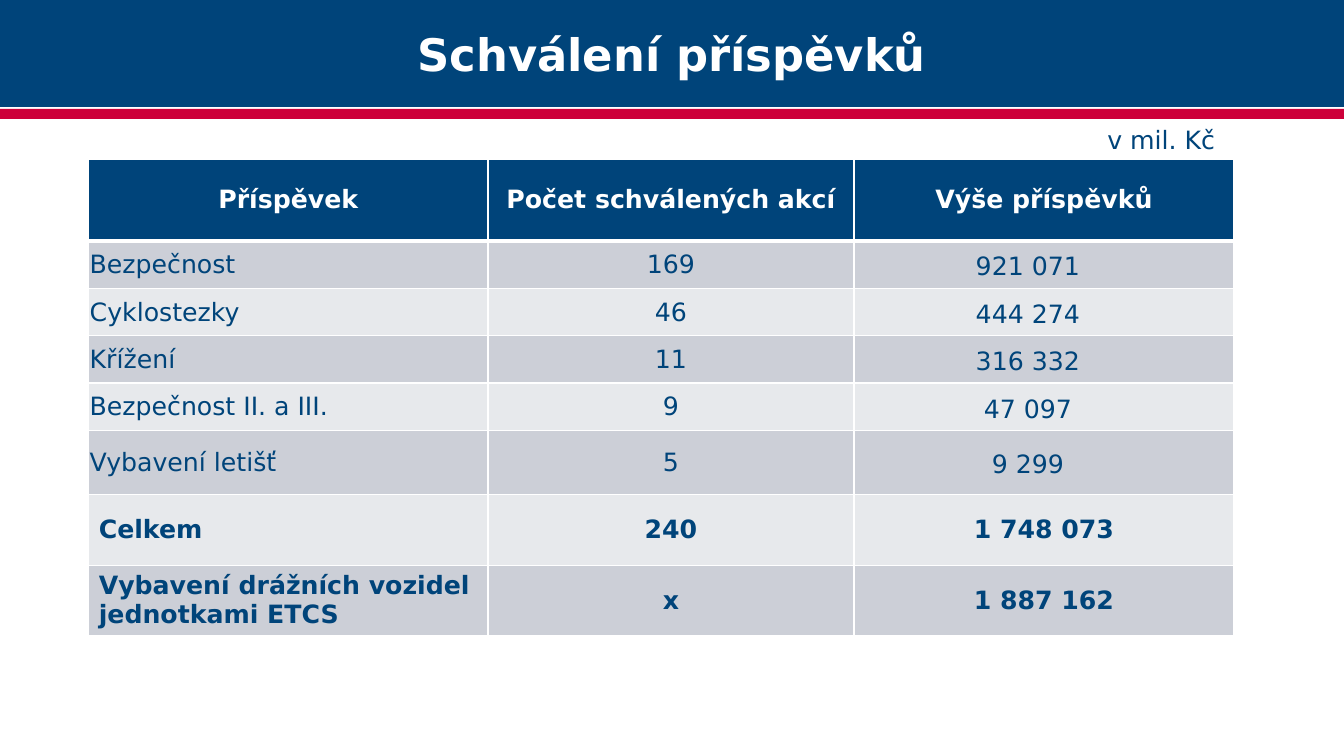
from pptx import Presentation
from pptx.dml.color import RGBColor
from pptx.enum.shapes import MSO_SHAPE as Shape
from pptx.enum.text import MSO_ANCHOR as Anchor, MSO_AUTO_SIZE as AutoSize, PP_ALIGN as Align
from pptx.oxml import parse_xml
from pptx.oxml.ns import nsdecls
from pptx.util import Inches, Pt

COLORS = {"navy": "00447A", "red": "CD003A", "white": "FFFFFF", "dark": "CCCFD7", "light": "E7E9EC"}
FONT = "DejaVu Sans"
COLUMN_WIDTHS = [3.96, 3.63, 3.77]
ROW_HEIGHTS = [0.81, 0.47, 0.47, 0.47, 0.47, 0.64, 0.7, 0.7]
ROWS = [
    ("Příspěvek", "Počet schválených akcí", "Výše příspěvků"),
    ("Bezpečnost", "169", "921 071"),
    ("Cyklostezky", "46", "444 274"),
    ("Křížení", "11", "316 332"),
    ("Bezpečnost II. a III.", "9", "47 097"),
    ("Vybavení letišť", "5", "9 299"),
    ("Celkem", "240", "1 748 073"),
    ("Vybavení drážních vozidel jednotkami ETCS", "x", "1 887 162"),
]
FIRST_TOTAL = 6


def color(name):
    """Return the named palette colour."""
    return RGBColor.from_string(COLORS[name])


def paint(shape, name):
    """Give a shape or cell a solid fill."""
    shape.fill.solid()
    shape.fill.fore_color.rgb = color(name)


def write(frame, text, ink, size=18, bold=False, align=Align.LEFT):
    """Write one formatted run into a text frame and return its paragraph."""
    para = frame.paragraphs[0]
    para.alignment = align
    span = para.add_run()
    span.text = text
    span.font.name = FONT
    span.font.size = Pt(size)
    span.font.bold = bold
    span.font.color.rgb = color(ink)
    return para


def add_border(cell, side, points):
    """Draw one white border on a cell."""
    cell._tc.get_or_add_tcPr().append(parse_xml(
        f'<a:ln{side} {nsdecls("a")} w="{Pt(points)}"><a:solidFill>'
        f'<a:srgbClr val="{COLORS["white"]}"/></a:solidFill></a:ln{side}>'))


def add_header(page, left, top, width, height):
    """Place the title band and the red stripe under it."""
    title = page.shapes.title
    title.left, title.top, title.width, title.height = (
        Inches(left), Inches(top), Inches(width), Inches(height))
    paint(title, "navy")
    frame = title.text_frame
    frame.auto_size = AutoSize.NONE
    frame.vertical_anchor = Anchor.MIDDLE
    write(frame, "Schválení příspěvků", "white", 32, True, Align.CENTER)
    stripe = page.shapes.add_shape(
        Shape.RECTANGLE, Inches(left), Inches(top + height + 0.02), Inches(width), Inches(0.1))
    stripe.shadow.inherit = False
    paint(stripe, "red")
    stripe.line.fill.background()


def fill_cell(cell, text, row, column):
    """Fill one table cell according to its row and column."""
    header = row == 0
    detail = 0 < row < FIRST_TOTAL
    for side, points in (("L", 1), ("R", 1), ("T", 3 if row == 1 else 1), ("B", 3 if header else 1)):
        add_border(cell, side, points)
    paint(cell, "navy" if header else "dark" if row % 2 else "light")
    cell.vertical_anchor = Anchor.MIDDLE
    align = Align.LEFT if column == 0 and not header else Align.CENTER
    para = write(cell.text_frame, text, "white" if header else "navy", bold=not detail, align=align)
    if detail:
        cell.margin_left = cell.margin_top = cell.margin_right = Inches(0.01)
        cell.margin_bottom = 0
        if column == 2:
            cell.margin_right = Inches(0.33)
            para.line_spacing = 1.15


def add_contributions(page, left, top):
    """Place the table of contributions."""
    table = page.shapes.add_table(
        len(ROWS), len(COLUMN_WIDTHS), Inches(left), Inches(top),
        Inches(sum(COLUMN_WIDTHS)), Inches(sum(ROW_HEIGHTS))).table
    for column, width in zip(table.columns, COLUMN_WIDTHS):
        column.width = Inches(width)
    for row, height in zip(table.rows, ROW_HEIGHTS):
        row.height = Inches(height)
    for row, texts in enumerate(ROWS):
        for column, text in enumerate(texts):
            fill_cell(table.cell(row, column), text, row, column)


def add_unit(page, left, top, width, height):
    """Place the unit note above the table."""
    box = page.shapes.add_textbox(Inches(left), Inches(top), Inches(width), Inches(height))
    box.text_frame.word_wrap = True
    write(box.text_frame, "v mil. Kč", "navy", align=Align.RIGHT)


def main():
    """Build the slide and save the deck."""
    deck = Presentation()
    deck.slide_width, deck.slide_height = Inches(13.33), Inches(7.5)
    page = deck.slides.add_slide(deck.slide_layouts[5])
    page.background.fill.solid()
    page.background.fill.fore_color.rgb = color("white")
    add_header(page, 0, 0, 13.33, 1.06)
    add_contributions(page, 0.88, 1.58)
    add_unit(page, 10.77, 1.18, 1.38, 0.4)
    deck.save("out.pptx")


if __name__ == "__main__":
    main()
